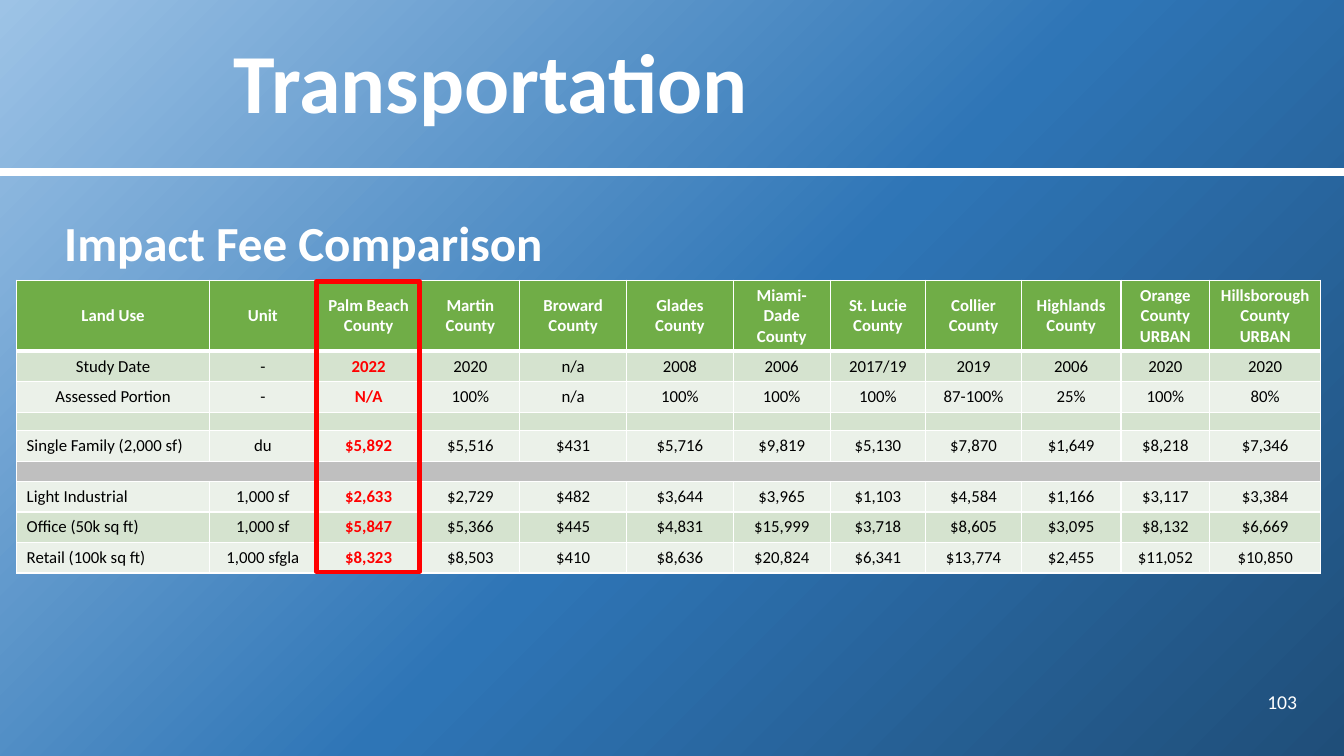
import pptx
import pptx.dml.color
import pptx.enum.shapes
import pptx.enum.text
import pptx.oxml
import pptx.oxml.ns
import pptx.util
from lxml import etree

Cm = pptx.util.Cm
Pt = pptx.util.Pt
ALIGN = pptx.enum.text.PP_ALIGN
MIDDLE = pptx.enum.text.MSO_ANCHOR.MIDDLE
qn = pptx.oxml.ns.qn
NS = 'xmlns:a="http://schemas.openxmlformats.org/drawingml/2006/main"'

WHITE, BLACK, RED = "FFFFFF", "000000", "FF0000"
GREEN, BAND_DARK, BAND_LIGHT, GREY = "70AD47", "D5E3CF", "EBF1E9", "BFBFBF"
BACKDROP = [(0, "9DC3E6"), (53, "2E75B6"), (100, "1F4E79")]

TABLE_LEFT, TABLE_TOP = 0.42, 7.06
COLUMN_WIDTHS = [4.86, 2.69, 2.64, 2.49, 2.69, 2.69,
                 2.44, 2.41, 2.41, 2.51, 2.24, 2.79]
HEADER_HEIGHT, ROW_HEIGHT, GAP_HEIGHT, DIVIDER_HEIGHT = 1.79, 0.77, 0.46, 0.51
FOCUS_COLUMN = 2

HEADER = ["Land Use", "Unit", "Palm Beach County", "Martin County",
          "Broward County", "Glades County", "Miami-Dade County",
          "St. Lucie County", "Collier County", "Highlands County",
          "Orange County\nURBAN", "Hillsborough County\nURBAN"]
STUDY_DATE = ["Study Date", "-", "2022", "2020", "n/a", "2008", "2006",
              "2017/19", "2019", "2006", "2020", "2020"]
ASSESSED = ["Assessed Portion", "-", "N/A", "100%", "n/a", "100%", "100%",
            "100%", "87-100%", "25%", "100%", "80%"]
SINGLE_FAMILY = ["Single Family (2,000 sf)", "du", "$5,892", "$5,516", "$431",
                 "$5,716", "$9,819", "$5,130", "$7,870", "$1,649", "$8,218",
                 "$7,346"]
INDUSTRIAL = ["Light Industrial", "1,000 sf", "$2,633", "$2,729", "$482",
              "$3,644", "$3,965", "$1,103", "$4,584", "$1,166", "$3,117",
              "$3,384"]
OFFICE = ["Office (50k sq ft)", "1,000 sf", "$5,847", "$5,366", "$445",
          "$4,831", "$15,999", "$3,718", "$8,605", "$3,095", "$8,132",
          "$6,669"]
RETAIL = ["Retail (100k sq ft)", "1,000 sfgla", "$8,323", "$8,503", "$410",
          "$8,636", "$20,824", "$6,341", "$13,774", "$2,455", "$11,052",
          "$10,850"]
EMPTY = [""] * len(HEADER)
# Each row: values, height, fill, alignment of the first column
ROWS = [
    (HEADER, HEADER_HEIGHT, GREEN, ALIGN.CENTER),
    (STUDY_DATE, ROW_HEIGHT, BAND_DARK, ALIGN.CENTER),
    (ASSESSED, ROW_HEIGHT, BAND_LIGHT, ALIGN.CENTER),
    (EMPTY, GAP_HEIGHT, BAND_DARK, ALIGN.LEFT),
    (SINGLE_FAMILY, ROW_HEIGHT, BAND_LIGHT, ALIGN.LEFT),
    (EMPTY, DIVIDER_HEIGHT, GREY, ALIGN.LEFT),
    (INDUSTRIAL, ROW_HEIGHT, BAND_LIGHT, ALIGN.LEFT),
    (OFFICE, ROW_HEIGHT, BAND_DARK, ALIGN.LEFT),
    (RETAIL, ROW_HEIGHT, BAND_LIGHT, ALIGN.LEFT),
]
DIVIDER_ROW = 5


def rgb(value):
    return pptx.dml.color.RGBColor.from_string(value)


def apply(target, formats):
    for name, value in formats.items():
        setattr(target, name, value)


def format_text(frame, size, color, bold=False, **paragraph_formats):
    for paragraph in frame.paragraphs:
        apply(paragraph, paragraph_formats)
        for run in paragraph.runs:
            apply(run.font, {"name": "Calibri", "size": Pt(size), "bold": bold})
            run.font.color.rgb = rgb(color)


def paint_background(slide):
    fill = slide.background.fill
    fill.gradient()
    gradient = slide.element.find(".//" + qn("a:gradFill"))
    stops = "".join(
        f'<a:gs pos="{place * 1000}"><a:srgbClr val="{color}"/></a:gs>'
        for place, color in BACKDROP)
    radial = pptx.oxml.parse_xml(
        f'<a:gradFill {NS} rotWithShape="1"><a:gsLst>{stops}</a:gsLst>'
        '<a:path path="circle"><a:fillToRect r="100000" b="100000"/></a:path>'
        '<a:tileRect l="-100000" t="-100000"/></a:gradFill>')
    gradient.getparent().replace(gradient, radial)


def add_title(slide, wording):
    title = slide.shapes.title
    apply(title, {"left": Cm(5.64), "top": Cm(0),
                  "width": Cm(27.28), "height": Cm(4.34)})
    frame = title.text_frame
    frame.text = wording
    apply(frame, {"vertical_anchor": MIDDLE, "word_wrap": True})
    format_text(frame, 60, WHITE, True, alignment=ALIGN.LEFT, line_spacing=0.9)
    shadow = pptx.oxml.parse_xml(
        f'<a:effectLst {NS}><a:outerShdw blurRad="38100" dist="38100" '
        'dir="2700000" algn="tl"><a:srgbClr val="000000">'
        '<a:alpha val="43000"/></a:srgbClr></a:outerShdw></a:effectLst>')
    run = frame.paragraphs[0].runs[0]
    run.font.fill._xPr.find(qn("a:solidFill")).addnext(shadow)


def add_text(slide, wording, box, size, bold=False, anchor=None, **formats):
    frame = slide.shapes.add_textbox(*map(Cm, box)).text_frame
    frame.text = wording
    apply(frame, {"word_wrap": True, "vertical_anchor": anchor})
    format_text(frame, size, WHITE, bold, **formats)


def add_rule(slide, y):
    rule = slide.shapes.add_connector(
        pptx.enum.shapes.MSO_CONNECTOR.STRAIGHT,
        Cm(-0.05), Cm(y), Cm(33.87), Cm(y))
    rule.line.color.rgb = rgb(WHITE)
    rule.line.width = Pt(6)
    etree.SubElement(rule.element.spPr, qn("a:effectLst"))


def draw_borders(cell, row):
    """Thin white edges, with a thick one between header and body."""
    widths = {"L": 1, "R": 1, "T": 3 if row == 1 else 1,
              "B": 3 if row == 0 else 1}
    properties = cell._tc.get_or_add_tcPr()
    for side, width in widths.items():
        properties.append(pptx.oxml.parse_xml(
            f'<a:ln{side} {NS} w="{Pt(width)}"><a:solidFill>'
            f'<a:srgbClr val="{WHITE}"/></a:solidFill></a:ln{side}>'))


def fill_cell(cell, wording, row, column, color, label_alignment):
    draw_borders(cell, row)
    cell.fill.solid()
    cell.fill.fore_color.rgb = rgb(color)
    cell.vertical_anchor = MIDDLE
    if not wording:
        apply(cell, {"margin_top": 0, "margin_bottom": 0})
        paragraph = cell.text_frame.paragraphs[0]._p
        etree.SubElement(paragraph, qn("a:endParaRPr"), sz="600")
        return
    cell.text_frame.text = wording
    focus = column == FOCUS_COLUMN and row > 0
    ink = WHITE if row == 0 else RED if focus else BLACK
    format_text(cell.text_frame, 12, ink, row == 0 or focus,
                alignment=ALIGN.CENTER if column else label_alignment)


def add_fee_table(slide):
    heights = [height for _, height, _, _ in ROWS]
    table = slide.shapes.add_table(
        len(ROWS), len(HEADER), Cm(TABLE_LEFT), Cm(TABLE_TOP),
        Cm(sum(COLUMN_WIDTHS)), Cm(sum(heights))).table
    table.horz_banding = False
    for column, width in enumerate(COLUMN_WIDTHS):
        table.columns[column].width = Cm(width)
    for row, (values, height, color, label_alignment) in enumerate(ROWS):
        table.rows[row].height = Cm(height)
        for column, wording in enumerate(values):
            fill_cell(table.cell(row, column), wording, row, column, color,
                      label_alignment)
    table.cell(DIVIDER_ROW, 0).merge(table.cell(DIVIDER_ROW, len(HEADER) - 1))


def add_focus_frame(slide):
    frame = slide.shapes.add_shape(
        pptx.enum.shapes.MSO_SHAPE.RECTANGLE,
        Cm(7.98), Cm(7.09), Cm(2.59), Cm(7.32))
    frame.shadow.inherit = False
    frame.fill.background()
    frame.line.color.rgb = rgb(RED)
    frame.line.width = Pt(3.25)


def main():
    deck = pptx.Presentation()
    apply(deck, {"slide_width": Cm(33.87), "slide_height": Cm(19.05)})
    slide = deck.slides.add_slide(deck.slide_layouts.get_by_name("Title Only"))
    paint_background(slide)
    add_rule(slide, 4.34)
    add_title(slide, "Transportation")
    add_text(slide, "Impact Fee Comparison", (1.37, 4.93, 31.55, 2.1), 35,
             bold=True, line_spacing=1.2)
    add_text(slide, "103", (30.68, 17.17, 2.26, 1.02), 14, anchor=MIDDLE,
             alignment=ALIGN.RIGHT)
    add_fee_table(slide)
    add_focus_frame(slide)
    deck.save("out.pptx")


if __name__ == "__main__":
    main()
